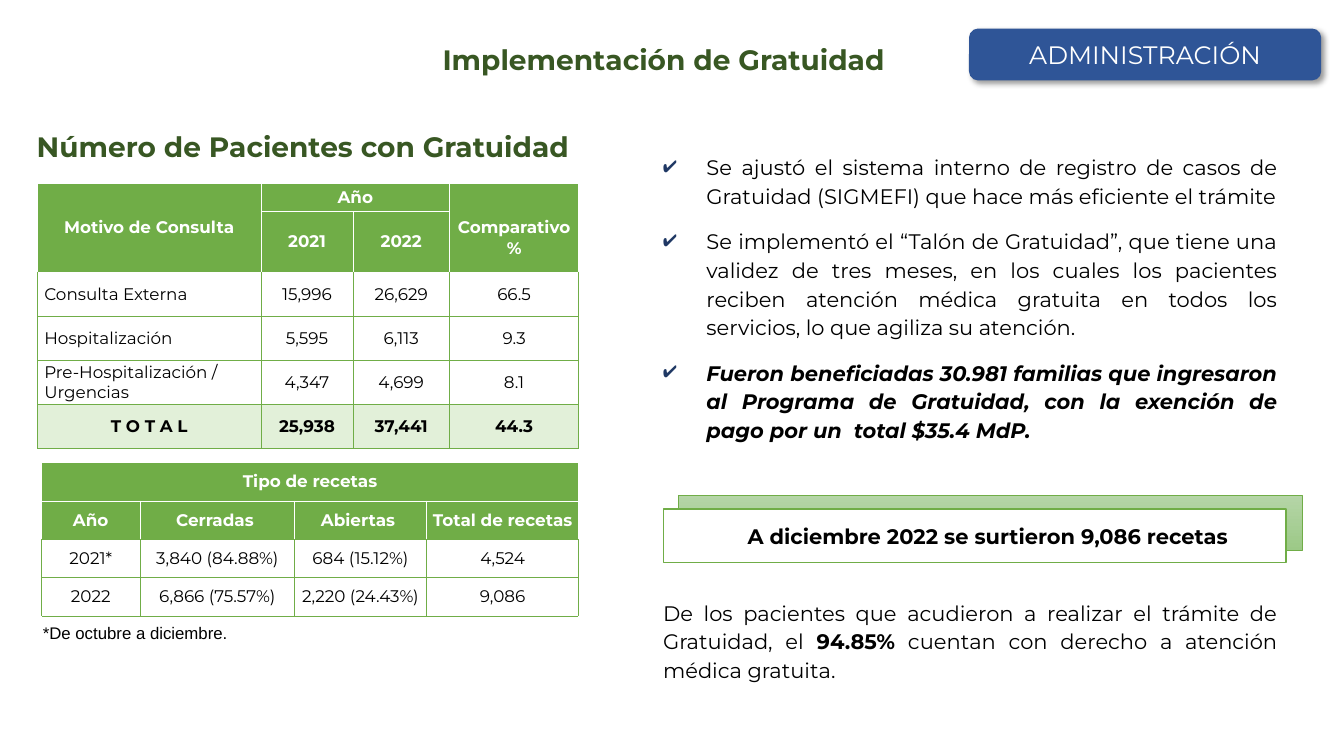
from lxml import etree
from pptx import Presentation
from pptx.dml.color import RGBColor
from pptx.enum.shapes import MSO_SHAPE
from pptx.enum.text import MSO_ANCHOR, PP_ALIGN
from pptx.oxml import parse_xml
from pptx.oxml.ns import qn
from pptx.util import Inches, Pt

INK = {
    "white": "FFFFFF", "black": "000000", "green": "70AD47", "pale": "E2F0D9",
    "forest": "385723", "blue": "2F5597", "navy": "1F3864",
    "light": "B5D5A7", "mid": "9CC987",
}
RGB = {name: RGBColor.from_string(tone) for name, tone in INK.items()}
NS = 'xmlns:a="http://schemas.openxmlformats.org/drawingml/2006/main"'
LEFT, MID, JUST = PP_ALIGN.LEFT, PP_ALIGN.CENTER, PP_ALIGN.JUSTIFY

deck = Presentation()
deck.slide_width, deck.slide_height = Inches(13.33), Inches(7.5)
slide = deck.slides.add_slide(deck.slide_layouts[6])
shapes = slide.shapes
COL, ROW = deck.slide_width / 100, deck.slide_height / 100


def area(x, y, w, h):
    return int(x * COL), int(y * ROW), int(w * COL), int(h * ROW)


def write(para, text, size, tone="black", align=LEFT, bold=False, face="Montserrat"):
    para.alignment = align
    font = para.font
    font.size, font.name, font.bold = Pt(size), face, bold
    font.color.rgb = RGB[tone]
    for i, part in enumerate(text.split("|")):
        run = para.add_run()
        run.text = part
        if i % 2:
            run.font.bold = True


back = shapes.add_shape(MSO_SHAPE.RECTANGLE, *area(50.48, 65.47, 46.43, 7.33))
back.fill.gradient()
back.fill.gradient_angle = 270
for stop, tone in zip(back.fill.gradient_stops, ("light", "mid")):
    stop.color.rgb = RGB[tone]
front = shapes.add_shape(MSO_SHAPE.RECTANGLE, *area(49.35, 67.33, 46.35, 7.07))
badge = shapes.add_shape(MSO_SHAPE.ROUNDED_RECTANGLE, *area(72.15, 3.87, 26.1, 6.67))
for box, tone, edge, width in (
    (back, None, "green", 0.5), (front, "white", "green", 1), (badge, "blue", "blue", 1),
):
    box.shadow.inherit = False
    if tone:
        box.fill.solid()
        box.fill.fore_color.rgb = RGB[tone]
    box.line.color.rgb = RGB[edge]
    box.line.width = Pt(width)
    box.text_frame.vertical_anchor = MSO_ANCHOR.MIDDLE
front.text_frame.margin_left, front.text_frame.margin_right = Inches(0.52), Inches(0.26)
front.text_frame.word_wrap = True
write(front.text_frame.paragraphs[0], "A diciembre 2022 se surtieron 9,086 recetas",
      15, align=MID, bold=True)
write(badge.text_frame.paragraphs[0], "ADMINISTRACIÓN", 18, "white", MID)
badge.element.spPr.find(qn("a:effectLst")).append(parse_xml(
    f'<a:outerShdw {NS} blurRad="50800" dist="38100" dir="2700000" algn="tl" rotWithShape="0">'
    f'<a:srgbClr val="{INK["black"]}"><a:alpha val="40000"/></a:srgbClr></a:outerShdw>'))

frames = []
for spot in (
    (31.95, 4.4, 44.63, 6.93), (0.75, 16.53, 43.58, 5.87),
    (48.6, 78.27, 47.18, 12.8), (45.75, 19.33, 50.03, 44),
):
    frame = shapes.add_textbox(*area(*spot)).text_frame
    frame.word_wrap = True
    frames.append(frame)
title, head, note, list_ = frames
title.vertical_anchor = MSO_ANCHOR.MIDDLE
title.margin_left = title.margin_right = Inches(0.13)
write(title.paragraphs[0], "Implementación de Gratuidad", 20, "forest", bold=True)
write(head.paragraphs[0], "Número de Pacientes con Gratuidad", 20, "forest", MID, True)
note.paragraphs[0].line_spacing = 1.14
write(note.paragraphs[0],
      "De los pacientes que acudieron a realizar el trámite de Gratuidad, el |94.85%"
      "| cuentan con derecho a atención médica gratuita.", 15, align=JUST)

points = (
    "Se ajustó el sistema interno de registro de casos de Gratuidad (SIGMEFI) que hace más "
    "eficiente el trámite",
    "Se implementó el “Talón de Gratuidad”, que tiene una validez de tres meses, en los cuales "
    "los pacientes reciben atención médica gratuita en todos los servicios, lo que agiliza su "
    "atención.",
    "Fueron beneficiadas 30.981 familias que ingresaron al Programa de Gratuidad, con la "
    "exención de pago por un  total $35.4 MdP.",
)
for i, text in enumerate(points):
    para = list_.add_paragraph() if i else list_.paragraphs[0]
    para.line_spacing, para.space_after = 1.14, Pt(12)
    props = para._p.get_or_add_pPr()
    props.set("marL", str(Inches(0.81)))
    props.set("indent", str(-Inches(0.43)))
    tint = etree.SubElement(props, qn("a:buClr"))
    etree.SubElement(tint, qn("a:srgbClr")).set("val", INK["navy"])
    etree.SubElement(props, qn("a:buChar")).set("char", "✔")
    last = i == len(points) - 1
    write(para, text, 15, align=JUST, bold=last)
    para.font.italic = last

visits = [
    ["Motivo de Consulta", "Año", "", " Comparativo %"],
    ["", "2021", "2022", ""],
    ["Consulta Externa", "15,996", "26,629", "66.5"],
    ["Hospitalización", "5,595", "6,113", "9.3"],
    ["Pre-Hospitalización / Urgencias", "4,347", "4,699", "8.1"],
    ["T O T A L", "25,938", "37,441", "44.3"],
]
scripts = [
    ["Tipo de recetas", "", "", ""],
    ["Año", "Cerradas ", "Abiertas ", "Total de recetas"],
    ["2021*", "3,840 (84.88%)", "684 (15.12%)", "4,524"],
    ["2022", "6,866 (75.57%)", "2,220 (24.43%)", "9,086"],
    ["*De octubre a diciembre.", "", "", ""],
]
W, G = "white", "green"
tables = (
    (visits, 2.78, 24.27, (16.65, 6.83, 7.2, 9.6), (3.73, 7.87) + (5.83,) * 4, 5,
     ((0, 0, 1, 0), (0, 1, 0, 2), (0, 3, 1, 3)),
     (W + " " + W, W + " " + W, W + " " + G) + (G + " " + G,) * 3),
    (scripts, 3.08, 61.2, (7.35, 11.48, 9.83, 11.33), (5.07,) * 4 + (4.67,), 1,
     ((0, 0, 0, 3), (4, 0, 4, 3)),
     (W + " " + W, W + " " + G, G + " " + G, G + " " + G, G + " " + W)),
)
for data, x, y, wide, high, pad, spans, rims in tables:
    grid = shapes.add_table(len(data), 4, *area(x, y, sum(wide), sum(high))).table
    grid.first_row = grid.horz_banding = False
    for col, size in zip(grid.columns, wide):
        col.width = int(size * COL)
    for row, size in zip(grid.rows, high):
        row.height = int(size * ROW)
    for r, line in enumerate(data):
        top, base = rims[r].split()
        foot = line[0].startswith("*")
        side = W if r < 2 or foot else G
        total = line[0].startswith("T O")
        for c, text in enumerate(line):
            cell = grid.cell(r, c)
            cell.margin_left = cell.margin_right = Pt(pad)
            cell.margin_top = cell.margin_bottom = 0
            cell.vertical_anchor = MSO_ANCHOR.MIDDLE
            for tag, tone in zip("LRTB", (side, side, top, base)):
                cell._tc.get_or_add_tcPr().append(parse_xml(
                    f'<a:ln{tag} {NS} w="6350"><a:solidFill><a:srgbClr val="{INK[tone]}"/>'
                    f'</a:solidFill></a:ln{tag}>'))
            cell.fill.solid()
            cell.fill.fore_color.rgb = RGB[G if r < 2 else "pale" if total else W]
            left = foot or (data is visits and c == 0 and 2 <= r <= 4)
            write(cell.text_frame.paragraphs[0], text, 12, W if r < 2 else "black",
                  LEFT if left else MID, r < 2 or total, "Arial" if foot else "Montserrat")
    for r, c, r2, c2 in spans:
        grid.cell(r, c).merge(grid.cell(r2, c2))

deck.save("out.pptx")
